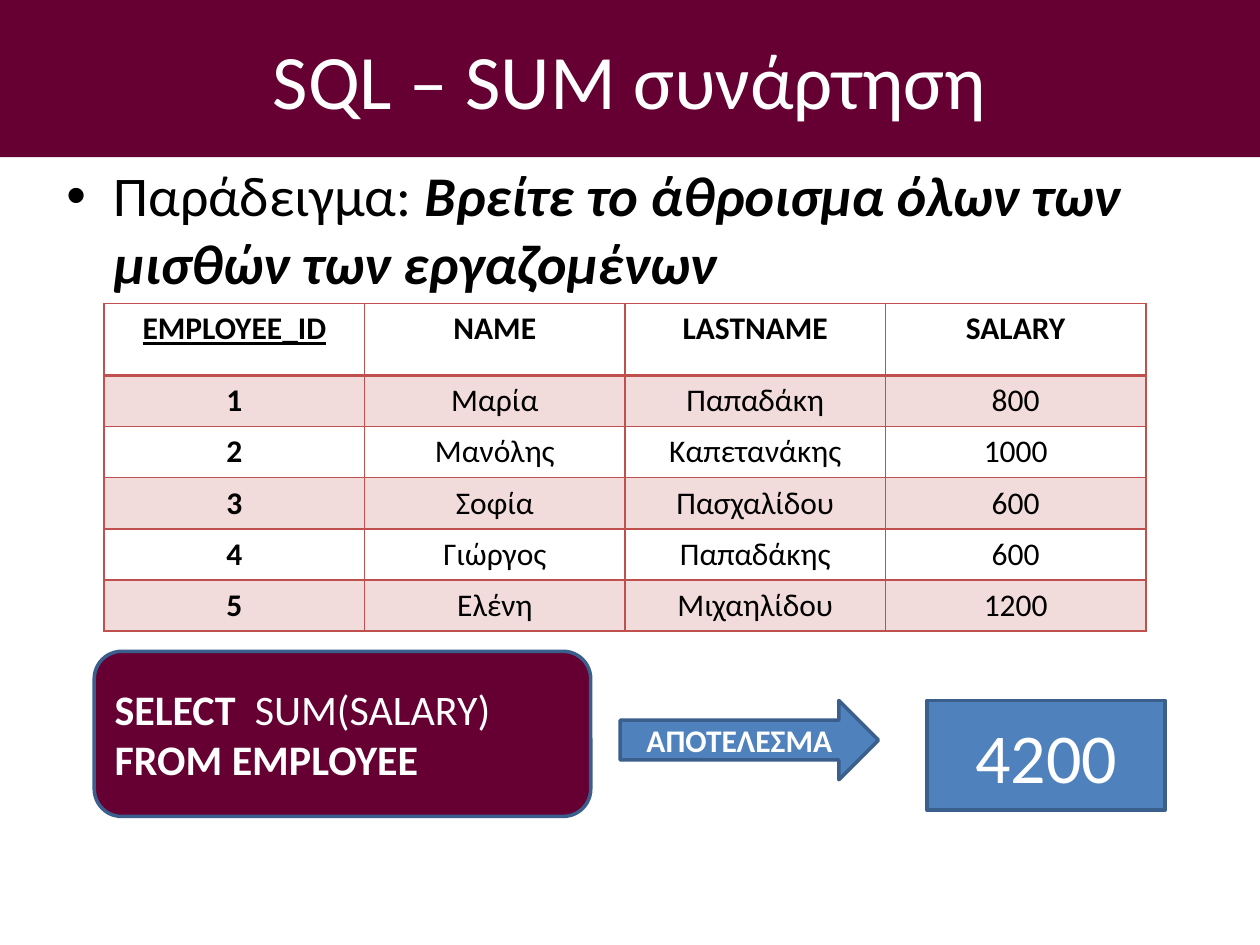
"""Build a slide that explains the SQL SUM function with a table and its result."""
from lxml import etree
from pptx import Presentation
from pptx.dml.color import RGBColor
from pptx.enum import shapes, text
from pptx.oxml import ns
from pptx.util import Cm, Pt

WINE = RGBColor(0x66, 0x00, 0x33)
BLUE = RGBColor(0x4F, 0x81, 0xBD)
NAVY = RGBColor(0x3A, 0x5F, 0x8C)
RED = RGBColor(0xC0, 0x50, 0x4D)
WHITE = RGBColor(0xFF, 0xFF, 0xFF)
BLACK = RGBColor(0x00, 0x00, 0x00)
ROWS = [
    ("EMPLOYEE_ID", "NAME", "LASTNAME", "SALARY"),
    ("1", "Μαρία", "Παπαδάκη", "800"),
    ("2", "Μανόλης", "Καπετανάκης", "1000"),
    ("3", "Σοφία", "Πασχαλίδου", "600"),
    ("4", "Γιώργος", "Παπαδάκης", "600"),
    ("5", "Ελένη", "Μιχαηλίδου", "1200"),
]


def write(paragraph, spans, size, color, align=text.PP_ALIGN.LEFT):
    """Fill a paragraph with (wording, bold, italic) spans."""
    paragraph.alignment = align
    font = paragraph.font
    font.name, font.size, font.color.rgb = "Calibri", Pt(size), color
    for wording, bold, italic in spans:
        span = paragraph.add_run()
        span.text = wording
        span.font.bold, span.font.italic = bold, italic


def add_box(kind, place, fill, anchor=text.MSO_ANCHOR.MIDDLE):
    """Add a filled, outlined shape and return its text frame."""
    box = slide.shapes.add_shape(kind, *(Cm(length) for length in place))
    box.shadow.inherit = False
    box.fill.solid()
    box.fill.fore_color.rgb = fill
    box.line.color.rgb = NAVY
    box.line.width = Pt(2)
    box.text_frame.word_wrap = True
    box.text_frame.vertical_anchor = anchor
    return box.text_frame


deck = Presentation()
deck.slide_width, deck.slide_height = Cm(25.4), Cm(19.05)
slide = deck.slides.add_slide(deck.slide_layouts[5])
CENTER = text.PP_ALIGN.CENTER

title = slide.shapes.title
title.left, title.top, title.width, title.height = Cm(0), Cm(0), Cm(25.4), Cm(3.17)
title.fill.solid()
title.fill.fore_color.rgb = WINE
title.text_frame.vertical_anchor = text.MSO_ANCHOR.MIDDLE
write(title.text_frame.paragraphs[0], [("SQL – SUM συνάρτηση", False, False)], 44, WHITE, CENTER)

example = slide.shapes.add_textbox(Cm(1.09), Cm(3.12), Cm(22.86), Cm(12.57)).text_frame
example.word_wrap = True
paragraph = example.paragraphs[0]
write(paragraph, [("Παράδειγμα: ", False, False),
                  ("Βρείτε το άθροισμα όλων των μισθών των εργαζομένων", True, True)], 32, BLACK)
properties = paragraph._p.get_or_add_pPr()
properties.set("marL", str(Cm(0.95)))
properties.set("indent", str(Cm(-0.95)))
bullet_font = etree.Element(ns.qn("a:buFont"), typeface="Arial")
bullet = etree.Element(ns.qn("a:buChar"), char="•")
properties.insert(0, bullet_font)
bullet_font.addnext(bullet)

query = add_box(shapes.MSO_SHAPE.ROUNDED_RECTANGLE, (1.9, 13.13, 10.01, 3.33), WINE)
write(query.paragraphs[0], [("SELECT", True, False), ("  SUM(SALARY)", False, False)], 24, WHITE)
write(query.add_paragraph(), [("FROM EMPLOYEE", True, False)], 24, WHITE)

table = slide.shapes.add_table(len(ROWS), 4, Cm(2.1), Cm(6.12), Cm(21), Cm(6.6)).table
for column in table.columns:
    column.width = Cm(5.25)
for r, values in enumerate(ROWS):
    table.rows[r].height = Cm(1.03 if r else 1.45)
    for c, value in enumerate(values):
        cell = table.cell(r, c)
        paragraph = cell.text_frame.paragraphs[0]
        write(paragraph, [(value, r == 0 or c == 0, False)], 18, BLACK, CENTER)
        paragraph.runs[0].font.underline = r == 0 and c == 0
        cell_properties = cell._tc.get_or_add_tcPr()
        for side in "LRTB":
            heavy = (r, side) in ((0, "B"), (1, "T"))
            border = etree.SubElement(cell_properties, ns.qn(f"a:ln{side}"), w=str(Pt(2 if heavy else 1)))
            paint = etree.SubElement(border, ns.qn("a:solidFill"))
            etree.SubElement(paint, ns.qn("a:srgbClr"), val=str(RED))
        if r % 2:
            cell.fill.solid()
            cell.fill.fore_color.rgb = RED
            color = cell_properties.find(ns.qn("a:solidFill"))[0]
            etree.SubElement(color, ns.qn("a:alpha"), val="20000")
        else:
            cell.fill.background()

arrow = add_box(shapes.MSO_SHAPE.RIGHT_ARROW, (12.5, 14.12, 5.21, 1.6), BLUE)
write(arrow.paragraphs[0], [("ΑΠΟΤΕΛΕΣΜΑ", True, False)], 18, WHITE, CENTER)
result = add_box(shapes.MSO_SHAPE.RECTANGLE, (18.69, 14.12, 4.8, 2.21), BLUE)
write(result.paragraphs[0], [("4200", False, False)], 40, WHITE, CENTER)

deck.save("out.pptx")
